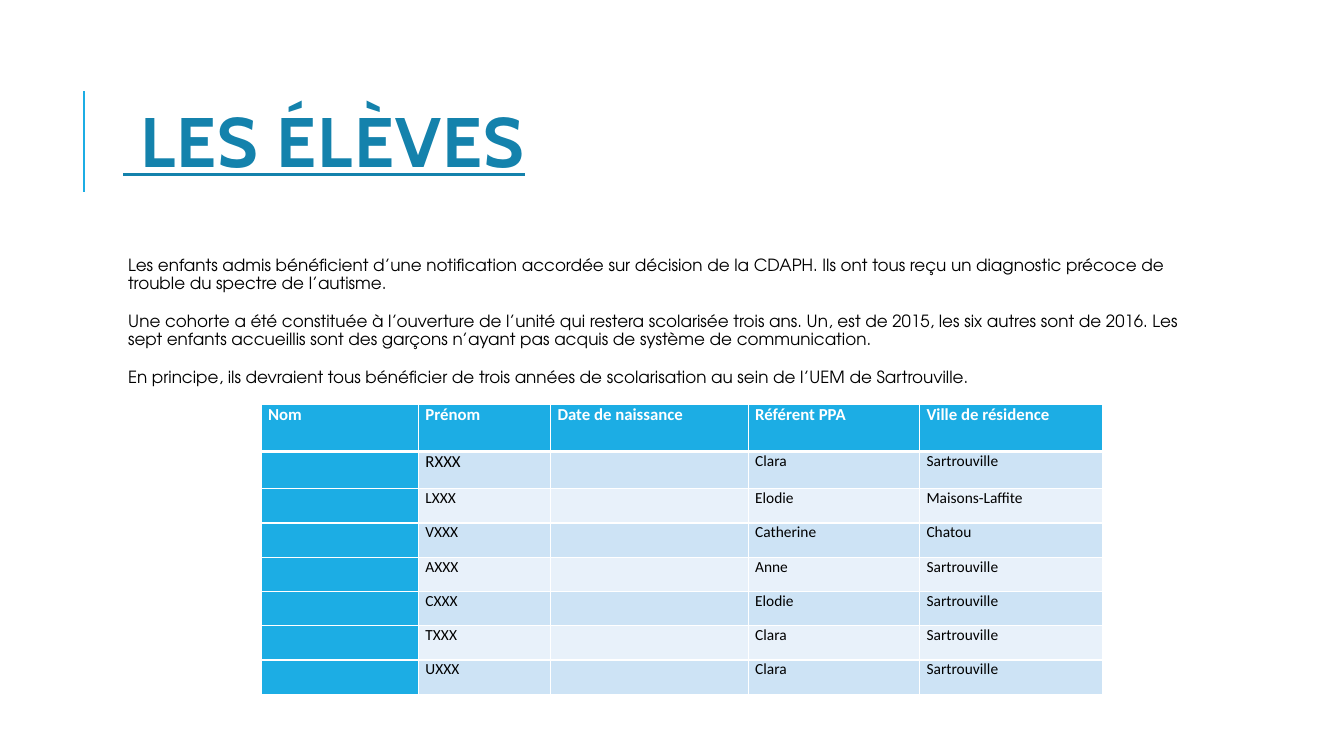
from lxml import etree
from pptx import Presentation
from pptx.dml.color import RGBColor
from pptx.enum.shapes import MSO_CONNECTOR
from pptx.enum.text import MSO_ANCHOR, MSO_AUTO_SIZE, PP_ALIGN
from pptx.oxml import parse_xml
from pptx.oxml.ns import nsdecls, qn
from pptx.util import Inches, Pt

STRAIGHT = MSO_CONNECTOR.STRAIGHT
MIDDLE, TOP = MSO_ANCHOR.MIDDLE, MSO_ANCHOR.TOP
LEFT = PP_ALIGN.LEFT
NO_AUTOFIT = MSO_AUTO_SIZE.NONE

WHITE = RGBColor(0xFF, 0xFF, 0xFF)
BLACK = RGBColor(0, 0, 0)
BLUE = RGBColor(0x1C, 0xAD, 0xE4)
DARK_BLUE = RGBColor(0x14, 0x82, 0xAC)
BANDS = (RGBColor(0xCD, 0xE3, 0xF5), RGBColor(0xE8, 0xF1, 0xFA))

TITLE = " LES ÉLÈVES"
BODY = [
    "Les enfants admis bénéficient d’une notification accordée sur décision de la CDAPH. "
    "Ils ont tous reçu un diagnostic précoce de trouble du spectre de l’autisme.",
    "Une cohorte a été constituée à l’ouverture de l’unité qui restera scolarisée trois ans. "
    "Un, est de 2015, les six autres sont de 2016. Les sept enfants accueillis sont des "
    "garçons n’ayant pas acquis de système de communication.",
    "En principe, ils devraient tous bénéficier de trois années de scolarisation au sein "
    "de l’UEM de Sartrouville.",
]
HEADERS = ["Nom", "Prénom", "Date de naissance", "Référent PPA", "Ville de résidence"]
PUPILS = [
    ("RXXX", "Clara", "Sartrouville"),
    ("LXXX", "Elodie", "Maisons-Laffite"),
    ("VXXX", "Catherine", "Chatou"),
    ("AXXX", "Anne", "Sartrouville"),
    ("CXXX", "Elodie", "Sartrouville"),
    ("TXXX", "Clara", "Sartrouville"),
    ("UXXX", "Clara", "Sartrouville"),
]
ROWS = [HEADERS] + [["", name, "", referent, town] for name, referent, town in PUPILS]
COLUMN_WIDTHS = [1.56, 1.31, 1.96, 1.7, 1.82]
ROW_HEIGHTS = [0.47, 0.37] + [0.34] * 6

TITLE_FONT = {"name": "Cabin", "size": Pt(50), "bold": True, "underline": True}
BODY_FONT = {"name": "TeX Gyre Adventor", "size": Pt(12)}
BODY_PARAGRAPH = {"alignment": LEFT, "line_spacing": 0.9,
                  "space_before": Pt(12), "space_after": Pt(2)}
BODY_FRAME = {"auto_size": NO_AUTOFIT, "vertical_anchor": TOP, "word_wrap": True,
              "margin_left": Inches(0.05), "margin_right": Inches(0.05),
              "margin_top": Inches(0.05), "margin_bottom": Inches(0.05)}
CELL_MARGINS = {"margin_left": Inches(0.07), "margin_right": Inches(0.07),
                "margin_top": 0, "margin_bottom": 0}


def apply(target, formats):
    for name, value in formats.items():
        setattr(target, name, value)


def place(shape, left, top, width, height):
    apply(shape, {"left": Inches(left), "top": Inches(top),
                  "width": Inches(width), "height": Inches(height)})


def format_font(font, formats, color):
    apply(font, formats)
    font.color.rgb = color


def add_blank_bullet(paragraph):
    properties = paragraph._p.get_or_add_pPr()
    properties.set("marL", str(Inches(0.1)))
    properties.set("indent", str(-Inches(0.1)))
    etree.SubElement(properties, qn("a:buChar")).set("char", " ")


def add_borders(cell, widths):
    properties = cell._tc.get_or_add_tcPr()
    for side, width in widths.items():
        properties.append(parse_xml(
            f'<a:ln{side} {nsdecls("a")} w="{Pt(width)}"><a:solidFill>'
            f'<a:srgbClr val="{WHITE}"/></a:solidFill></a:ln{side}>'))


def add_accent_line(slide):
    line = slide.shapes.add_connector(
        STRAIGHT, Inches(0.83), Inches(1.9), Inches(0.83), Inches(0.9))
    line.line.color.rgb = BLUE
    line.line.width = Pt(1.5)
    etree.SubElement(line._element.spPr, qn("a:effectLst"))


def fill_title(title):
    place(title, 1.12, 0.64, 10.63, 1.64)
    apply(title.text_frame, {"auto_size": NO_AUTOFIT, "vertical_anchor": MIDDLE,
                             "word_wrap": True})
    paragraph = title.text_frame.paragraphs[0]
    apply(paragraph, {"alignment": LEFT, "line_spacing": 0.8})
    run = paragraph.add_run()
    run.text = TITLE
    format_font(run.font, TITLE_FONT, DARK_BLUE)
    run.font._element.set("spc", "100")


def fill_body(body):
    place(body, 1.12, 2.5, 10.63, 1.51)
    frame = body.text_frame
    apply(frame, BODY_FRAME)
    frame.text = "\n".join(BODY)
    for paragraph in frame.paragraphs:
        apply(paragraph, BODY_PARAGRAPH)
        add_blank_bullet(paragraph)
        format_font(paragraph.runs[0].font, BODY_FONT, BLACK)


def fill_cell(cell, text, row, column):
    header = row == 0
    apply(cell, CELL_MARGINS)
    add_borders(cell, {"L": 1, "R": 1, "T": 3 if row == 1 else 1, "B": 3 if header else 1})
    cell.fill.solid()
    cell.fill.fore_color.rgb = BLUE if header or column == 0 else BANDS[(row - 1) % 2]
    if text:
        paragraph = cell.text_frame.paragraphs[0]
        paragraph.space_after = Pt(10)
        run = paragraph.add_run()
        run.text = text
        size = 12 if header or (row, column) == (1, 1) else 11
        format_font(run.font, {"name": "Calibri", "size": Pt(size), "bold": header},
                    WHITE if header else BLACK)


def add_pupil_table(slide):
    table = slide.shapes.add_table(
        len(ROWS), len(HEADERS), Inches(2.59), Inches(4.01),
        Inches(sum(COLUMN_WIDTHS)), Inches(sum(ROW_HEIGHTS))).table
    for column, width in zip(table.columns, COLUMN_WIDTHS):
        column.width = Inches(width)
    for row, height in zip(table.rows, ROW_HEIGHTS):
        row.height = Inches(height)
    for row, texts in enumerate(ROWS):
        for column, text in enumerate(texts):
            fill_cell(table.cell(row, column), text, row, column)


def main():
    presentation = Presentation()
    presentation.slide_width = Inches(13.33)
    presentation.slide_height = Inches(7.5)
    slide = presentation.slides.add_slide(presentation.slide_layouts[1])
    add_accent_line(slide)
    fill_title(slide.shapes.title)
    fill_body(slide.placeholders[1])
    add_pupil_table(slide)
    presentation.save("out.pptx")


if __name__ == "__main__":
    main()
